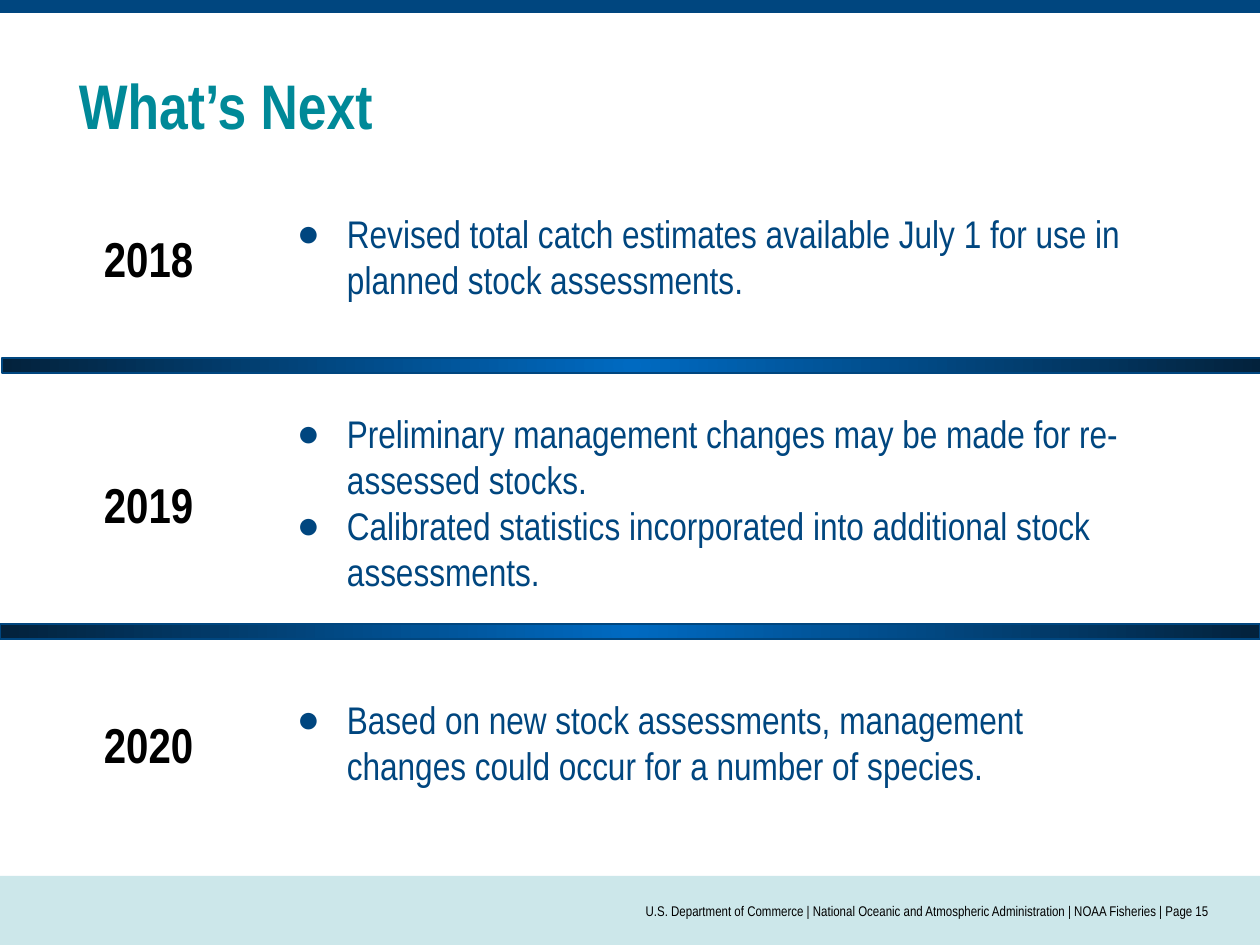
from lxml import etree
from pptx import Presentation, util as u
from pptx.dml.color import RGBColor
from pptx.enum import shapes, text
from pptx.oxml import ns

NAVY = RGBColor(0x00, 0x46, 0x7F)
TEAL = RGBColor(0x00, 0x89, 0x98)
PALE = RGBColor(0xCC, 0xE7, 0xEA)
BLUE = RGBColor(0x00, 0x6A, 0xC1)
MIDNIGHT = RGBColor(0x03, 0x22, 0x3C)
BLACK = RGBColor(0, 0, 0)
WHITE = RGBColor(255, 255, 255)

TIMELINE = [
    ("2018", 215, (184, 926, 144),
     ["Revised total catch estimates available July 1 for use in planned stock assessments."]),
    ("2019", 462, (402, 926, 200),
     ["Preliminary management changes may be made for re-assessed stocks.",
      "Calibrated statistics incorporated into additional stock assessments."]),
    ("2020", 702, (670, 885, 144),
     ["Based on new stock assessments, management changes could occur for a number of species."]),
]
FOOTER = " | ".join(["U.S. Department of Commerce",
                     "National Oceanic and Atmospheric Administration",
                     "NOAA Fisheries", "Page 15"])


def px(length):
    """Convert pixels to EMU."""
    return u.Emu(round(length * 914400 / 126))


class SlideBuilder:
    """Holds the style and the current slide."""

    font = "Arial Narrow"

    def __init__(self, page):
        self.page = page

    def band(self, left, top, width, height, color):
        """Add a plain filled rectangle."""
        shape = self.page.shapes.add_shape(
            shapes.MSO_SHAPE.RECTANGLE, px(left), px(top), px(width), px(height))
        shape.shadow.inherit = False
        shape.fill.solid()
        shape.fill.fore_color.rgb = color
        shape.line.fill.background()
        return shape

    def divider(self, left, top):
        """Add a full-width bar that darkens away from its centre."""
        bar = self.band(left, top, 1260, 15, BLUE)
        bar.line.color.rgb = NAVY
        bar.line.width = u.Pt(0.75)
        bar.fill.gradient()
        for stop, color, position in zip(bar.fill.gradient_stops, (BLUE, MIDNIGHT), (0, 1)):
            stop.color.rgb = color
            stop.position = position
        gradient = bar._element.spPr.find(ns.qn("a:gradFill"))
        linear = gradient.find(ns.qn("a:lin"))
        radial = etree.Element(ns.qn("a:path"), path="circle")
        etree.SubElement(radial, ns.qn("a:fillToRect"), dict.fromkeys("ltrb", "50000"))
        gradient.replace(linear, radial)

    def text(self, left, top, width, height, lines, size, color, bold=False,
             anchor=text.MSO_ANCHOR.TOP, align=text.PP_ALIGN.LEFT,
             inset=(13, 13), bullets=False, fill=None):
        """Add a text box with one paragraph per line."""
        box = self.page.shapes.add_textbox(px(left), px(top), px(width), px(height))
        if fill is not None:
            box.fill.solid()
            box.fill.fore_color.rgb = fill
        frame = box.text_frame
        frame.word_wrap = True
        frame.vertical_anchor = anchor
        frame.margin_left = frame.margin_right = px(inset[0])
        frame.margin_top = frame.margin_bottom = px(inset[1])
        for index, line in enumerate(lines):
            para = frame.add_paragraph() if index else frame.paragraphs[0]
            para.alignment = align
            if bullets:
                self.bullet(para, color)
            span = para.add_run()
            span.text = line
            span.font.name = self.font
            span.font.size = u.Pt(size)
            span.font.bold = bold
            span.font.color.rgb = color

    def bullet(self, para, color):
        """Give a paragraph a hanging round bullet."""
        props = para._p.get_or_add_pPr()
        props.set("marL", str(px(63)))
        props.set("indent", str(-px(50)))
        tint = etree.SubElement(props, ns.qn("a:buClr"))
        etree.SubElement(tint, ns.qn("a:srgbClr"), val=str(color))
        etree.SubElement(props, ns.qn("a:buFont"), typeface="Arial")
        etree.SubElement(props, ns.qn("a:buChar"), char="●")


def main():
    """Build and save the deck."""
    deck = Presentation()
    deck.slide_width, deck.slide_height = px(1260), px(945)
    slide = SlideBuilder(deck.slides.add_slide(deck.slide_layouts[6]))

    slide.band(0, 876, 1260, 69, PALE)
    slide.band(0, 0, 1260, 13, NAVY)
    slide.text(315, 876, 895, 69, [FOOTER], 8, BLACK, inset=(0, 6),
               anchor=text.MSO_ANCHOR.MIDDLE, align=text.PP_ALIGN.RIGHT)
    slide.text(66, 54, 1134, 101, ["What’s Next"], 36, TEAL, bold=True, fill=WHITE)

    for year, year_top, (top, width, height), items in TIMELINE:
        slide.text(91, year_top, 163, 81, [year], 28, BLACK, bold=True)
        slide.text(271, top, width, height, items, 22, NAVY, bullets=True,
                   anchor=text.MSO_ANCHOR.MIDDLE)

    slide.divider(2, 358)
    slide.divider(0, 624)
    deck.save("out.pptx")


if __name__ == "__main__":
    main()
